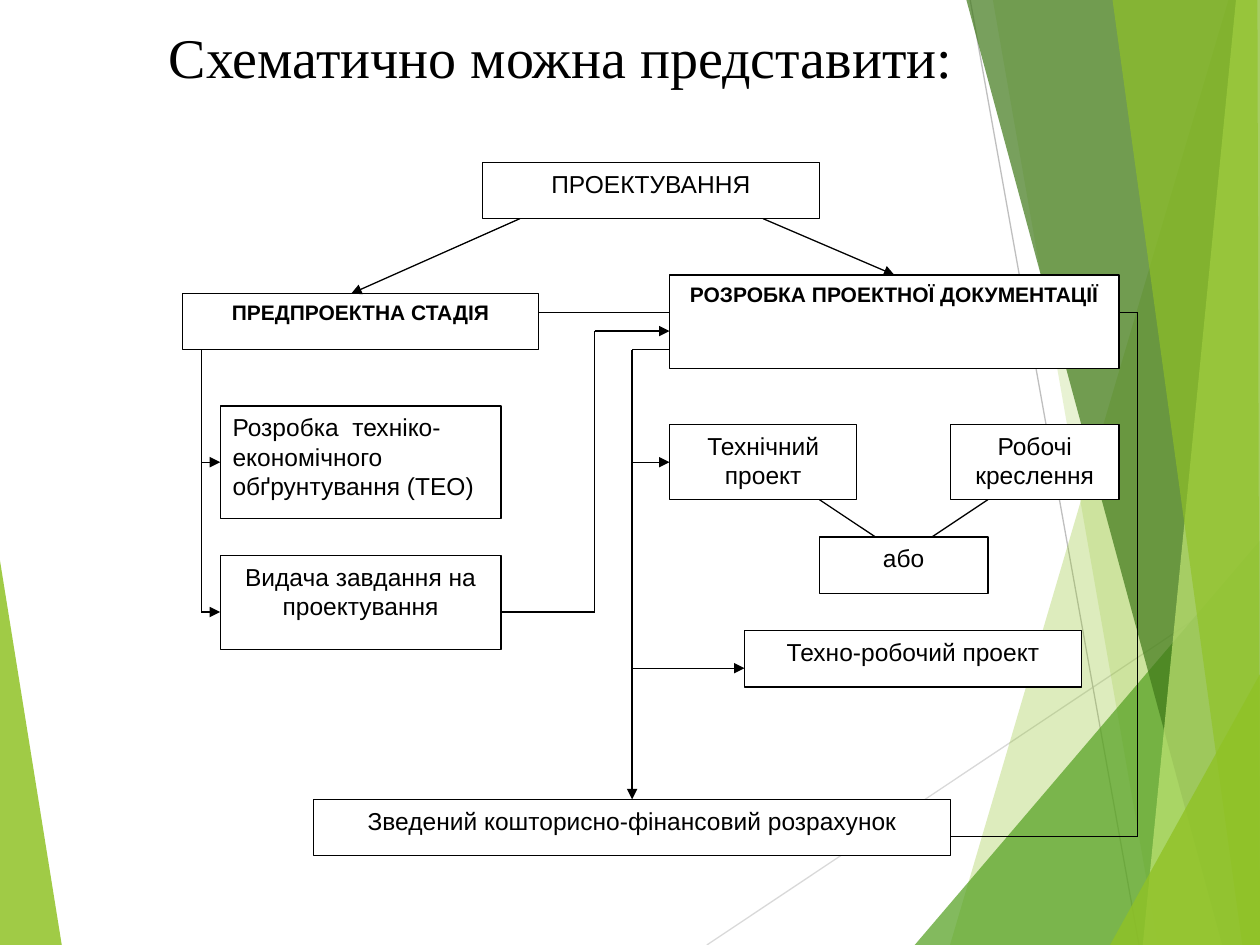
from dataclasses import dataclass

from lxml import etree
from pptx import Presentation
from pptx import util as u
from pptx.dml.color import RGBColor
from pptx.enum import shapes, text
from pptx.oxml import ns

Inches = u.Inches


@dataclass(frozen=True)
class Theme:
    ink: str = "000000"
    paper: str = "FFFFFF"
    lime: str = "90C226"
    green: str = "54A021"
    forest: str = "3F7819"
    pale: str = "C0E474"
    light_rule: str = "D9D9D9"
    dark_rule: str = "BFBFBF"
    title_font: str = "Times New Roman"
    body_font: str = "Arial"
    title_size: int = 32
    stage_size: int = 12
    body_size: int = 14
    line_width: float = 0.75


@dataclass(frozen=True)
class Box:
    left: float
    top: float
    width: float
    height: float


THEME = Theme()
PAGE = Box(0, 0, 10, 7.5)
TITLE = Box(1.24, 0.13, 7.65, 0.94)
DIAGRAM = Box(1.45, 1.29, 7.58, 5.5)
GRID_COLUMNS, GRID_ROWS = 51, 37

FACETS = [
    (THEME.lime, 30, [(9.75, 0), (7.54, 7.5), (10, 7.5), (10, 0)]),
    (THEME.lime, 20, [(7.88, 0), (9.19, 7.5), (10, 7.5), (10, 0)]),
    (THEME.green, 72, [(7.26, 7.5), (10, 4.29), (10, 7.5)]),
    (THEME.forest, 70, [(7.67, 0), (9.7, 7.5), (10, 7.5), (10, 0)]),
    (THEME.pale, 70, [(9.81, 0), (9.07, 7.5), (10, 7.5), (10, 0)]),
    (THEME.lime, 65, [(8.83, 0), (9.86, 7.5), (10, 7.5), (9.98, 0)]),
    (THEME.lime, 80, [(8.81, 7.5), (10, 5.35), (10, 7.5)]),
]
LEFT_FACET = (THEME.lime, 85, [(0, 4.45), (0.49, 7.5), (0, 7.5)])

STAGES = [
    ("ПРЕДПРОЕКТНА СТАДІЯ", 0, 7, 19, 3),
    ("РОЗРОБКА ПРОЕКТНОЇ ДОКУМЕНТАЦІЇ", 26, 6, 24, 5),
]
STEPS = [
    ("ПРОЕКТУВАННЯ", 16, 0, 18, 3),
    ("Розробка  техніко- економічного обґрунтування (ТЕО)", 2, 13, 15, 6),
    ("Видача завдання на проектування", 2, 21, 15, 5),
    ("Технічний проект", 26, 14, 10, 4),
    ("Робочі креслення", 41, 14, 9, 4),
    ("або", 34, 20, 9, 3),
    ("Техно-робочий проект", 30, 25, 18, 3),
    ("Зведений кошторисно-фінансовий розрахунок", 7, 34, 34, 3),
]
LEFT_ALIGNED = {STEPS[1][0]}

ARROWS = [
    [(18, 3), (9, 7)],
    [(31, 3), (38, 6)],
    [(1, 16), (2, 16)],
    [(1, 10), (1, 24), (2, 24)],
    [(17, 24), (22, 24), (22, 9), (26, 9)],
    [(26, 10), (24, 10), (24, 34)],
    [(24, 16), (26, 16)],
    [(24, 27), (30, 27)],
]
LINKS = [
    [(19, 8), (26, 8)],
    [(43, 18), (40, 20)],
    [(34, 18), (37, 20)],
    [(50, 8), (51, 8), (51, 36), (41, 36)],
]


def add_line(page, start, end, color, arrow=False):
    line = page.shapes.add_connector(
        shapes.MSO_CONNECTOR.STRAIGHT, *map(Inches, (*start, *end)))
    line.line.color.rgb = RGBColor.from_string(color)
    line.line.width = u.Pt(THEME.line_width)
    if arrow:
        etree.SubElement(line.line._get_or_add_ln(), ns.qn("a:tailEnd"), type="triangle")
    etree.SubElement(line._element.spPr, ns.qn("a:effectLst"))


def add_facet(page, box, color, opacity, points):
    corners = [(Inches(box.left + x), Inches(box.top + y)) for x, y in points]
    builder = page.shapes.build_freeform(*corners[0])
    builder.add_line_segments(corners[1:], close=True)
    facet = builder.convert_to_shape()
    facet.shadow.inherit = False
    facet.fill.solid()
    facet.fill.fore_color.rgb = RGBColor.from_string(color)
    facet.line.fill.background()
    tint = facet._element.spPr.find(".//" + ns.qn("a:srgbClr"))
    etree.SubElement(tint, ns.qn("a:alpha"), val=str(opacity * 1000))


def add_backdrop(page, box):
    add_facet(page, box, *LEFT_FACET)
    bottom = box.top + box.height
    add_line(page, (box.left + 5.61, bottom),
             (box.left + box.width, box.top + 4.57), THEME.light_rule)
    add_line(page, (box.left + 7.7, box.top), (box.left + 9.04, bottom), THEME.dark_rule)
    for facet in FACETS:
        add_facet(page, box, *facet)


def add_title(page, box):
    title = page.shapes.title
    title.left, title.top = Inches(box.left), Inches(box.top)
    title.width, title.height = Inches(box.width), Inches(box.height)
    frame = title.text_frame
    frame.text = "Схематично можна представити:"
    frame.word_wrap = True
    frame.auto_size = text.MSO_AUTO_SIZE.NONE
    frame.vertical_anchor = text.MSO_ANCHOR.TOP
    style_para(frame.paragraphs[0], THEME.title_font, THEME.title_size)


def style_para(para, font, size, bold=False, align=text.PP_ALIGN.LEFT):
    para.alignment = align
    para.font.name = font
    para.font.size = u.Pt(size)
    para.font.bold = bold
    para.font.color.rgb = RGBColor.from_string(THEME.ink)


def add_step(page, box, label, size, bold=False):
    step = page.shapes.add_shape(
        shapes.MSO_SHAPE.RECTANGLE,
        *map(Inches, (box.left, box.top, box.width, box.height)))
    step.shadow.inherit = False
    step.fill.solid()
    step.fill.fore_color.rgb = RGBColor.from_string(THEME.paper)
    step.line.color.rgb = RGBColor.from_string(THEME.ink)
    step.line.width = u.Pt(THEME.line_width)
    frame = step.text_frame
    frame.text = label
    frame.word_wrap = True
    frame.vertical_anchor = text.MSO_ANCHOR.TOP
    align = text.PP_ALIGN.LEFT if label in LEFT_ALIGNED else text.PP_ALIGN.CENTER
    style_para(frame.paragraphs[0], THEME.body_font, size, bold, align)


def add_diagram(page, box):
    column = box.width / GRID_COLUMNS
    row = box.height / GRID_ROWS

    def place(point):
        return box.left + point[0] * column, box.top + point[1] * row

    for steps, size, bold in ((STAGES, THEME.stage_size, True),
                              (STEPS, THEME.body_size, False)):
        for label, x, y, wide, high in steps:
            add_step(page, Box(*place((x, y)), wide * column, high * row),
                     label, size, bold)
    for routes, arrow in ((ARROWS, True), (LINKS, False)):
        for route in routes:
            points = [place(point) for point in route]
            for start, end in zip(points, points[1:]):
                add_line(page, start, end, THEME.ink, arrow and end == points[-1])


def main():
    deck = Presentation()
    deck.slide_width, deck.slide_height = Inches(PAGE.width), Inches(PAGE.height)
    page = deck.slides.add_slide(deck.slide_layouts[5])
    add_backdrop(page, PAGE)
    add_diagram(page, DIAGRAM)
    add_title(page, TITLE)
    deck.save("out.pptx")


if __name__ == "__main__":
    main()
